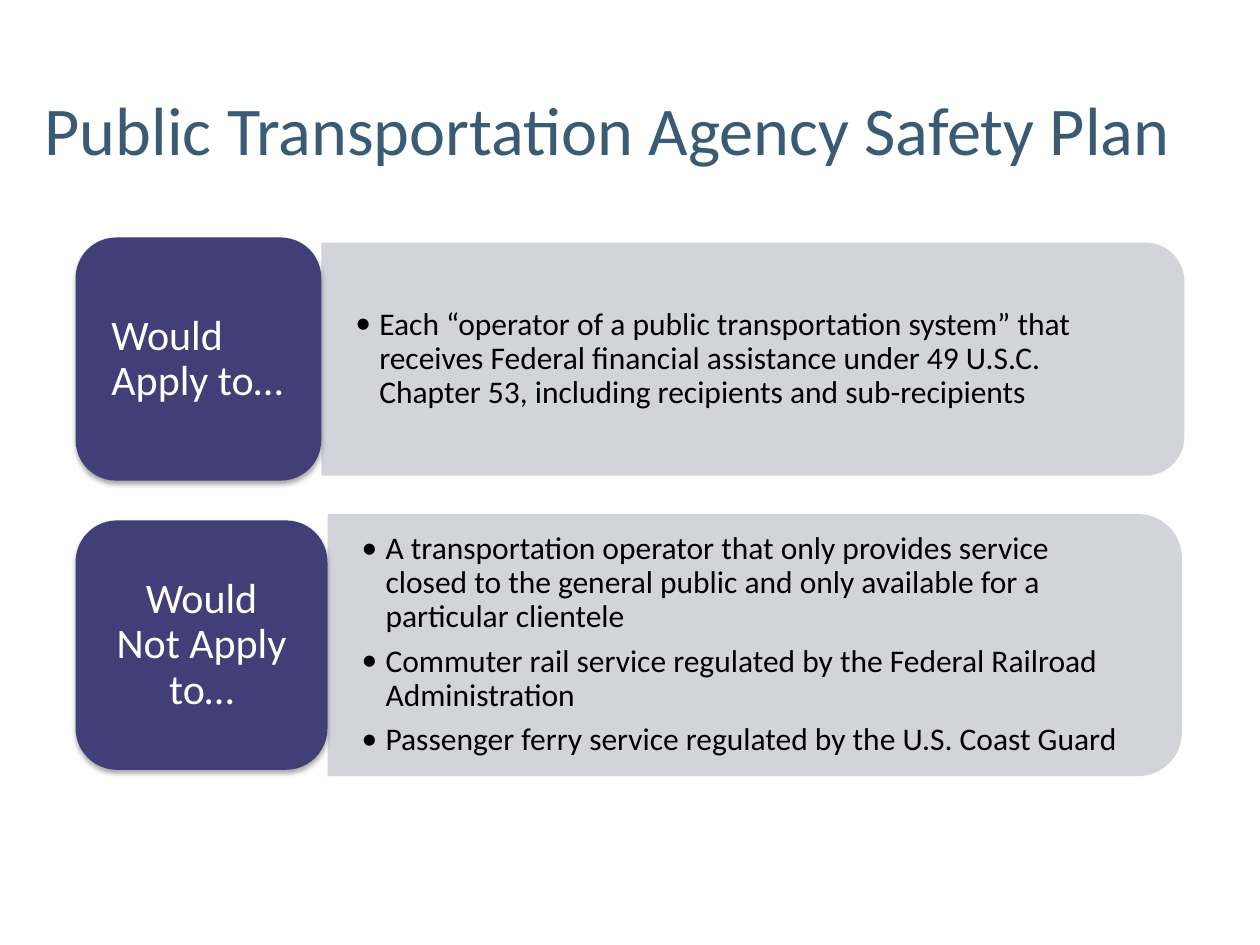
from dataclasses import dataclass

from lxml.etree import SubElement
from pptx import Presentation
from pptx.dml.color import RGBColor
from pptx.enum.shapes import MSO_SHAPE as Shape
from pptx.enum.text import MSO_ANCHOR as Anchor, MSO_AUTO_SIZE as AutoSize, PP_ALIGN as Align
from pptx.oxml.ns import qn
from pptx.util import Inches, Pt

FONT = "Calibri"
TITLE_BLUE = RGBColor(0x39, 0x5B, 0x74)
INDIGO = RGBColor(0x41, 0x3F, 0x77)
PANEL_GREY = RGBColor(0xCF, 0xCF, 0xD6)
WHITE = RGBColor(0xFF, 0xFF, 0xFF)
BLACK = RGBColor(0x00, 0x00, 0x00)

LABEL_LEFT = 0.6
TEXT_INSET = 0.1  # from the panel's top and bottom edges
BULLET_INDENT = 0.19


@dataclass
class Row:
    label: str
    align: Align
    middle: float
    label_width: float
    label_height: float
    panel_width: float
    panel_height: float
    text_width: float
    items: list[str]

    @property
    def panel_left(self) -> float:
        return LABEL_LEFT + self.label_width


ROWS = [
    Row("Would Apply to…", Align.LEFT, 2.85, 1.95, 1.93, 6.85, 1.85, 6.76, [
        "Each “operator of a public transportation system” that receives Federal "
        "financial assistance under 49 U.S.C. Chapter 53, including recipients and "
        "sub-recipients",
    ]),
    Row("Would Not Apply to…", Align.CENTER, 5.12, 2, 1.98, 6.78, 2.08, 6.68, [
        "A transportation operator that only provides service closed to the general "
        "public and only available for a particular clientele",
        "Commuter rail service regulated by the Federal Railroad Administration",
        "Passenger ferry service regulated by the U.S. Coast Guard",
    ]),
]


def place(box, left: float, top: float, width: float, height: float) -> None:
    box.left, box.top = Inches(left), Inches(top)
    box.width, box.height = Inches(width), Inches(height)


def format_frame(frame, side: float, end: float) -> None:
    """Wrap and centre vertically, with the given side and end insets."""
    frame.word_wrap = True
    frame.auto_size = AutoSize.NONE
    frame.vertical_anchor = Anchor.MIDDLE
    frame.margin_left = frame.margin_right = Inches(side)
    frame.margin_top = frame.margin_bottom = Inches(end)


def format_paragraph(para, size: float, color: RGBColor, align: Align) -> None:
    para.alignment = align
    para.space_before = Pt(0)
    para.font.name = FONT
    para.font.size = Pt(size)
    para.font.color.rgb = color


def add_bullet(para) -> None:
    properties = para._p.get_or_add_pPr()
    properties.set("marL", str(Inches(BULLET_INDENT)))
    properties.set("indent", str(-Inches(BULLET_INDENT)))
    SubElement(properties, qn("a:buFont"), typeface=FONT)
    SubElement(properties, qn("a:buChar"), char="•")


def add_shadow(box) -> None:
    effects = SubElement(box._element.spPr, qn("a:effectLst"))
    shadow = SubElement(effects, qn("a:outerShdw"), blurRad=str(Pt(3.1)),
                        dist=str(Pt(1.8)), dir="5400000", rotWithShape="0")
    color = SubElement(shadow, qn("a:srgbClr"), val=str(BLACK))
    SubElement(color, qn("a:alpha"), val="35000")


def add_panel(page, row: Row) -> None:
    """Draw the panel on its side, so that its round corners face right."""
    center = row.panel_left + row.panel_width / 2
    panel = page.shapes.add_shape(
        Shape.ROUND_2_SAME_RECTANGLE,
        Inches(center - row.panel_height / 2), Inches(row.middle - row.panel_width / 2),
        Inches(row.panel_height), Inches(row.panel_width))
    panel.rotation = 90
    panel.shadow.inherit = False
    panel.fill.solid()
    panel.fill.fore_color.rgb = PANEL_GREY
    color = panel._element.spPr.find(qn("a:solidFill")).find(qn("a:srgbClr"))
    SubElement(color, qn("a:alpha"), val="90000")
    panel.line.fill.background()
    # Behind the list placeholders
    page.shapes._spTree.insert(2, panel._element)


def add_label(page, row: Row) -> None:
    label = page.shapes.add_shape(
        Shape.ROUNDED_RECTANGLE,
        Inches(LABEL_LEFT), Inches(row.middle - row.label_height / 2),
        Inches(row.label_width), Inches(row.label_height))
    label.fill.solid()
    label.fill.fore_color.rgb = INDIGO
    label.line.fill.background()
    add_shadow(label)
    frame = label.text_frame
    format_frame(frame, 0.19, 0.14)
    frame.text = row.label
    para = frame.paragraphs[0]
    para.line_spacing = 0.9
    format_paragraph(para, 24, WHITE, row.align)


def fill_list(body, row: Row) -> None:
    height = row.panel_height - 2 * TEXT_INSET
    place(body, row.panel_left, row.middle - height / 2, row.text_width, height)
    frame = body.text_frame
    format_frame(frame, 0.27, 0)
    frame.text = "\n".join(row.items)
    for para in frame.paragraphs:
        para.line_spacing = 0.9
        para.space_after = Pt(6)
        add_bullet(para)
        format_paragraph(para, 18, BLACK, Align.LEFT)
    frame.paragraphs[-1].space_after = Pt(3)


def main() -> None:
    deck = Presentation()
    deck.slide_width, deck.slide_height = Inches(10), Inches(7.5)
    page = deck.slides.add_slide(deck.slide_layouts.get_by_name("Two Content"))

    title = page.shapes.title
    place(title, 0.14, 0.48, 9.36, 1.07)
    format_frame(title.text_frame, 0.1, 0.05)
    title.text_frame.text = "Public Transportation Agency Safety Plan"
    format_paragraph(title.text_frame.paragraphs[0], 39, TITLE_BLUE, Align.CENTER)

    for index, row in enumerate(ROWS, start=1):
        add_panel(page, row)
        fill_list(page.placeholders[index], row)
        add_label(page, row)

    deck.save("out.pptx")


if __name__ == "__main__":
    main()
